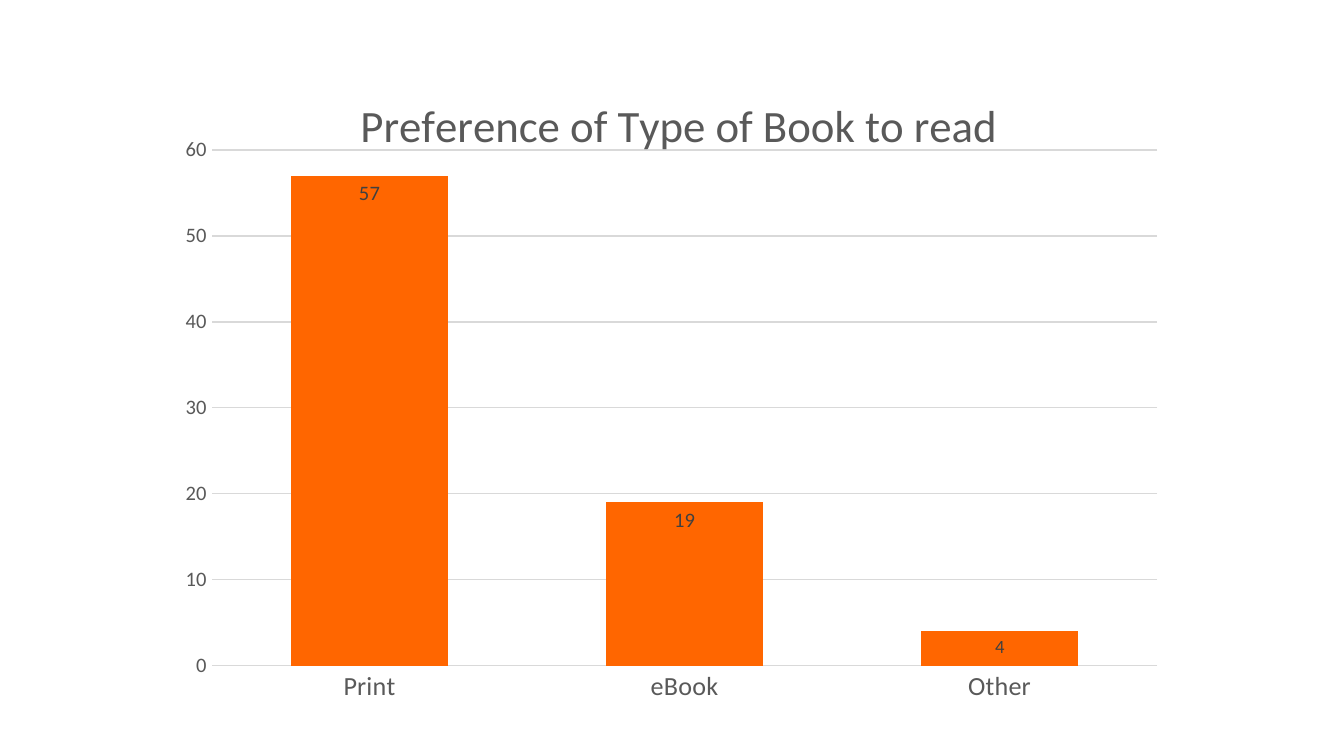
from lxml.etree import SubElement
from pptx import Presentation
from pptx.chart.data import CategoryChartData
from pptx.dml.color import RGBColor
from pptx.enum.chart import XL_CHART_TYPE, XL_LABEL_POSITION, XL_TICK_MARK
from pptx.oxml.ns import qn
from pptx.util import Inches, Pt

THEME = {
    "font": "Calibri",
    "bar": RGBColor.from_string("FF6600"),
    "grid": RGBColor.from_string("D9D9D9"),
    "text": RGBColor.from_string("595959"),
    "label": RGBColor.from_string("404040"),
    "title_size": 24,
    "category_size": 14,
    "value_size": 11,
    "small_size": 10,
}


def style_font(font, size, color):
    for name, value in {"name": THEME["font"], "size": Pt(size), "bold": False}.items():
        setattr(font, name, value)
    font.color.rgb = color


def set_layout(parent, shares):
    """Place a chart part by shares of the chart's width and height."""
    layout = parent.find(qn("c:layout"))
    if layout is None:
        layout = parent.makeelement(qn("c:layout"))
        tx = parent.find(qn("c:tx"))
        parent.insert(0 if tx is None else 1, layout)
    manual = SubElement(layout, qn("c:manualLayout"))
    for tag, value in shares.items():
        SubElement(manual, qn(f"c:{tag}")).set("val", str(value))


deck = Presentation()
deck.slide_width = Inches(10)
deck.slide_height = deck.slide_width * 9 // 16
page = deck.slides.add_slide(deck.slide_layouts[6])

data = CategoryChartData()
data.categories = ["Print", "eBook", "Other"]
data.add_series("Series 1", (57, 19, 4))
chart = page.shapes.add_chart(
    XL_CHART_TYPE.COLUMN_CLUSTERED,
    Inches(1.26), Inches(0.55), Inches(7.57), Inches(4.76), data,
).chart
style_font(chart.font, THEME["small_size"], THEME["text"])
chart.has_legend = False

# Title, laid over the top of the plot
chart.has_title = True
title_para = chart.chart_title.text_frame.paragraphs[0]
title_span = title_para.add_run()
title_span.text = "Preference of Type of Book to read"
style_font(title_span.font, THEME["title_size"], THEME["text"])
title = chart.element.find(".//" + qn("c:title"))
set_layout(title, {"xMode": "edge", "yMode": "edge", "x": 0.18, "y": 0.02})
title.find(qn("c:overlay")).set("val", "1")
set_layout(chart.element.find(".//" + qn("c:plotArea")), {
    "layoutTarget": "inner", "xMode": "edge", "yMode": "edge",
    "x": 0.042, "y": 0.119, "w": 0.929, "h": 0.806,
})

# Axes
axes = ((chart.category_axis, THEME["category_size"]), (chart.value_axis, THEME["value_size"]))
for axis, size in axes:
    axis.major_tick_mark = axis.minor_tick_mark = XL_TICK_MARK.NONE
    style_font(axis.tick_labels.font, size, THEME["text"])
for name, value in {"minimum_scale": 0, "maximum_scale": 60, "major_unit": 10}.items():
    setattr(chart.value_axis, name, value)
chart.value_axis.has_major_gridlines = True
for line in (chart.category_axis.format.line, chart.value_axis.major_gridlines.format.line):
    line.color.rgb = THEME["grid"]
    line.width = Pt(0.75)
chart.value_axis.format.line.fill.background()

# Bars and their values
plot = chart.plots[0]
for name, value in {"gap_width": 100, "overlap": -27, "vary_by_categories": False}.items():
    setattr(plot, name, value)
series = plot.series[0]
series.format.fill.solid()
series.format.fill.fore_color.rgb = THEME["bar"]
labels = series.data_labels
labels.show_value = True
labels.position = XL_LABEL_POSITION.INSIDE_END
style_font(labels.font, THEME["value_size"], THEME["label"])
other_label = series.points[2].data_label
style_font(other_label.font, THEME["small_size"], THEME["label"])
other_label.position = XL_LABEL_POSITION.INSIDE_END

deck.save("out.pptx")
